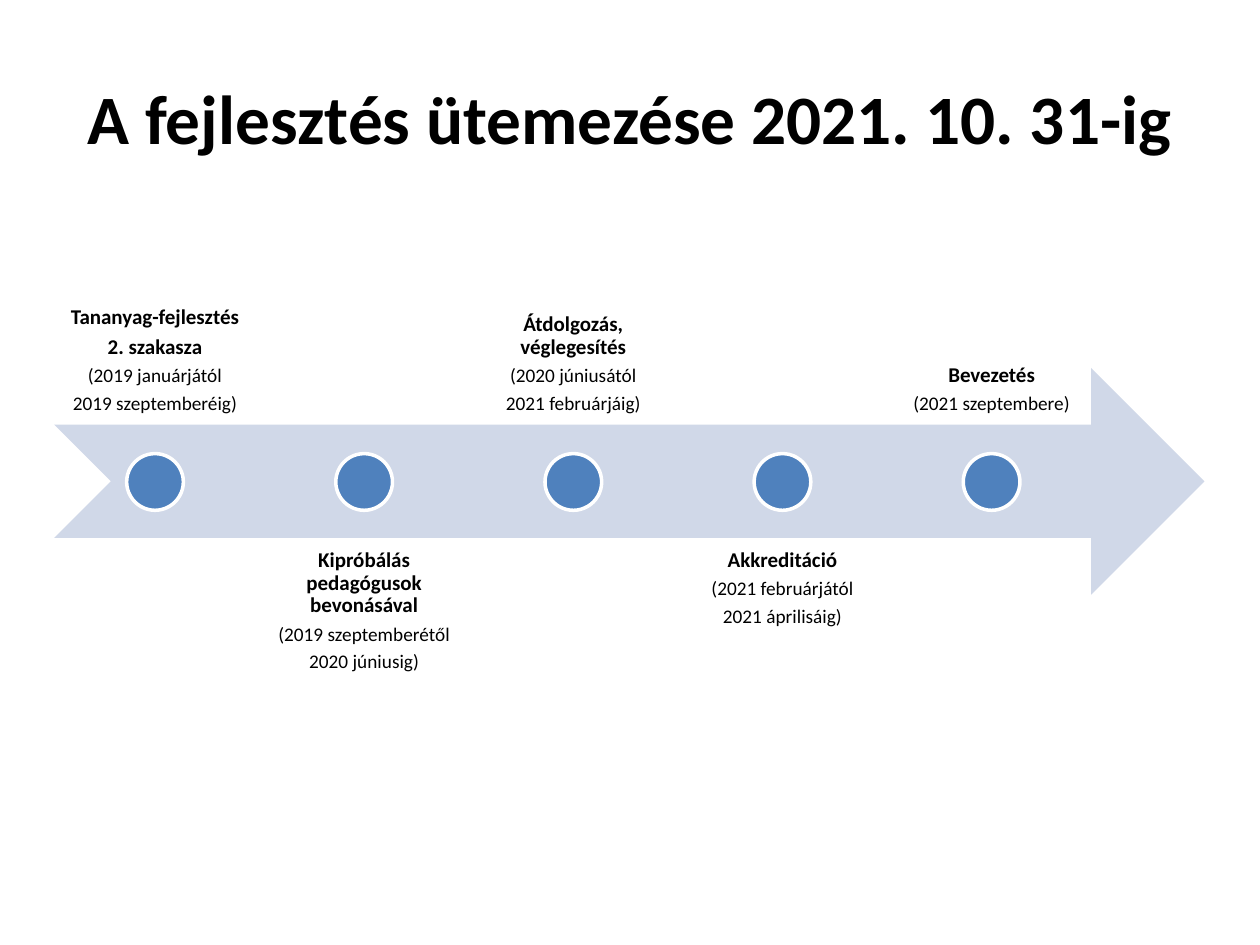
from dataclasses import dataclass

from pptx import Presentation
from pptx.dml.color import RGBColor
from pptx.enum.shapes import MSO_SHAPE
from pptx.enum.text import MSO_ANCHOR, PP_ALIGN
from pptx.util import Inches, Pt


@dataclass(frozen=True)
class Theme:
    font: str = "Calibri"
    text: RGBColor = RGBColor(0x00, 0x00, 0x00)
    arrow: RGBColor = RGBColor(0xD0, 0xD8, 0xE8)
    marker: RGBColor = RGBColor(0x4F, 0x81, 0xBD)
    marker_outline: RGBColor = RGBColor(0xFF, 0xFF, 0xFF)
    title_size: float = 39.6
    phase_size: float = 12
    period_size: float = 11


THEME = Theme()

# Each phase: bold name lines, then period lines.
PHASES = [
    (["Tananyag-fejlesztés", "2. szakasza"],
     ["(2019 januárjától", "2019 szeptemberéig)"]),
    (["Kipróbálás pedagógusok bevonásával"],
     ["(2019 szeptemberétől", "2020 júniusig)"]),
    (["Átdolgozás, véglegesítés"],
     ["(2020 júniusától", "2021 februárjáig)"]),
    (["Akkreditáció"],
     ["(2021 februárjától", "2021 áprilisáig)"]),
    (["Bevezetés"],
     ["(2021 szeptembere)"]),
]

FIRST_CENTER, PHASE_STEP = 1.23, 1.66
LABEL_WIDTH, LABEL_HEIGHT = 1.58, 1.8
LABEL_TOP_ABOVE, LABEL_TOP_BELOW = 1.58, 4.27
LABEL_INSET = 0.09
MARKER_SIZE, MARKER_TOP = 0.45, 3.6


def write_text(paragraph, text, *, size, bold=False):
    paragraph.alignment = PP_ALIGN.CENTER
    run = paragraph.add_run()
    run.text = text
    run.font.name = THEME.font
    run.font.size = Pt(size)
    run.font.bold = bold
    run.font.color.rgb = THEME.text


def add_title(slide, text):
    title = slide.shapes.title
    title.left, title.top = Inches(0.5), Inches(0.3)
    title.width, title.height = Inches(9), Inches(1.25)
    frame = title.text_frame
    frame.vertical_anchor = MSO_ANCHOR.MIDDLE
    write_text(frame.paragraphs[0], text, size=THEME.title_size, bold=True)


def add_filled_shape(slide, kind, left, top, width, height, color):
    shape = slide.shapes.add_shape(
        kind, Inches(left), Inches(top), Inches(width), Inches(height))
    shape.shadow.inherit = False
    shape.fill.solid()
    shape.fill.fore_color.rgb = color
    shape.line.fill.background()
    return shape


def add_marker(slide, center):
    marker = add_filled_shape(
        slide, MSO_SHAPE.OVAL, center - MARKER_SIZE / 2, MARKER_TOP,
        MARKER_SIZE, MARKER_SIZE, THEME.marker)
    marker.line.color.rgb = THEME.marker_outline
    marker.line.width = Pt(2)


def add_label(slide, center, names, periods, *, above):
    top = LABEL_TOP_ABOVE if above else LABEL_TOP_BELOW
    label = slide.shapes.add_textbox(
        Inches(center - LABEL_WIDTH / 2), Inches(top),
        Inches(LABEL_WIDTH), Inches(LABEL_HEIGHT))
    frame = label.text_frame
    frame.word_wrap = True
    frame.vertical_anchor = MSO_ANCHOR.BOTTOM if above else MSO_ANCHOR.TOP
    frame.margin_left = frame.margin_right = Inches(LABEL_INSET)
    frame.margin_top = frame.margin_bottom = Inches(LABEL_INSET)
    lines = [(name, THEME.phase_size, True) for name in names]
    lines += [(period, THEME.period_size, False) for period in periods]
    for index, (text, size, bold) in enumerate(lines):
        paragraph = frame.add_paragraph() if index else frame.paragraphs[0]
        paragraph.line_spacing = 0.9
        paragraph.space_after = Pt(4)
        write_text(paragraph, text, size=size, bold=bold)


def add_timeline(slide, phases):
    """Draw the arrow and its phases, with labels alternating above and below."""
    add_filled_shape(slide, MSO_SHAPE.NOTCHED_RIGHT_ARROW,
                     0.43, 2.92, 9.13, 1.8, THEME.arrow)
    for index, (names, periods) in enumerate(phases):
        center = FIRST_CENTER + index * PHASE_STEP
        add_label(slide, center, names, periods, above=index % 2 == 0)
        add_marker(slide, center)


def main():
    presentation = Presentation()
    presentation.slide_width, presentation.slide_height = Inches(10), Inches(7.5)
    title_only = presentation.slide_layouts[5]
    slide = presentation.slides.add_slide(title_only)
    add_title(slide, "A fejlesztés ütemezése 2021. 10. 31-ig")
    add_timeline(slide, PHASES)
    presentation.save("out.pptx")


if __name__ == "__main__":
    main()
